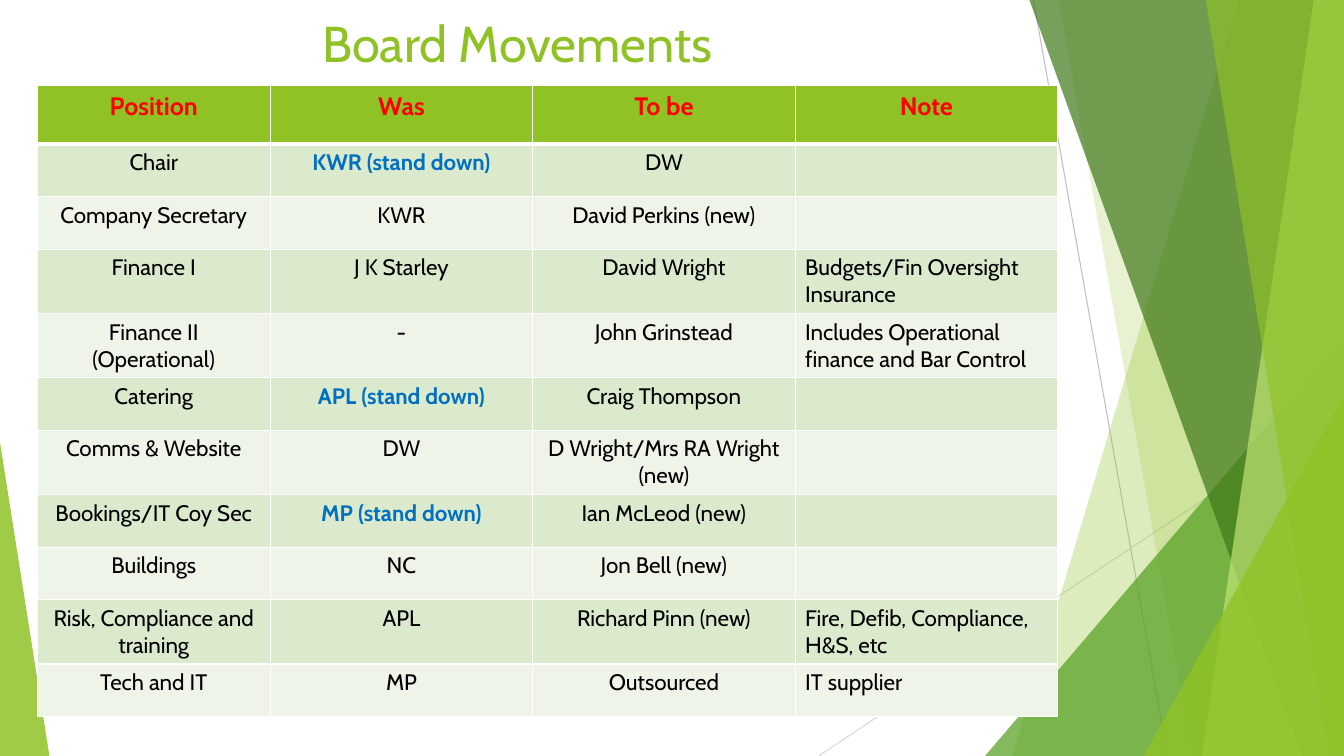
from lxml import etree
from pptx import Presentation
from pptx.dml.color import RGBColor
from pptx.enum import shapes, text
from pptx.oxml import ns
from pptx.util import Inches, Pt

FONT = "Cabin"
LIME, WHITE, BLACK, RED, BLUE = "90C226", "FFFFFF", "000000", "FF0000", "0070C0"
BANDS = ("DBE9CD", "EEF4E8")
W, H = 13.33, 7.5

HEADERS = ("Position", "Was", "To be", "Note")
MOVES = (
    ("Chair", "KWR (stand down)", "DW", ""),
    ("Company Secretary", "KWR", "David Perkins (new)", ""),
    ("Finance I", "J K Starley", "David Wright", "Budgets/Fin Oversight\nInsurance"),
    ("Finance II (Operational)", "-", "John Grinstead",
     "Includes Operational finance and Bar Control"),
    ("Catering", "APL (stand down)", "Craig Thompson", ""),
    ("Comms & Website", "DW", "D Wright/Mrs RA Wright (new)", ""),
    ("Bookings/IT Coy Sec", "MP (stand down)", "Ian McLeod (new)", ""),
    ("Buildings", "NC", "Jon Bell (new)", ""),
    ("Risk, Compliance and training", "APL", "Richard Pinn (new)",
     "Fire, Defib, Compliance, H&S, etc"),
    ("Tech and IT", "MP", "Outsourced", "IT supplier"),
)


def rgb(color):
    return RGBColor.from_string(color)


def sub(parent, tag, **attrs):
    return etree.SubElement(parent, ns.qn(tag), attrs)


def paint(sp, color, opacity):
    sp.shadow.inherit = False
    sp.fill.solid()
    sp.fill.fore_color.rgb = rgb(color)
    sp.line.fill.background()
    clr = sp._element.spPr.find(ns.qn("a:solidFill"))[0]
    sub(clr, "a:alpha", val=str(opacity * 1000))


def add_ray(slide, x1, y1, x2, y2, color):
    line = slide.shapes.add_connector(
        shapes.MSO_CONNECTOR.STRAIGHT, *map(Inches, (x1, y1, x2, y2)))
    line.line.color.rgb = rgb(color)
    line.line.width = Pt(0.75)
    sub(line._element.spPr, "a:effectLst")


def add_shard(slide, top_x, bottom_x, right, color, opacity):
    corners = [(right, 0), (right, H), (bottom_x, H)]
    fb = slide.shapes.build_freeform(Inches(top_x), 0)
    fb.add_line_segments([(Inches(x), Inches(y)) for x, y in corners])
    paint(fb.convert_to_shape(), color, opacity)


def add_wedge(slide, left, top, right, apex, color, opacity):
    sp = slide.shapes.add_shape(
        shapes.MSO_SHAPE.ISOSCELES_TRIANGLE,
        *map(Inches, (left, top, right - left, H - top)))
    sp.adjustments[0] = apex
    paint(sp, color, opacity)


def add_facets(slide, left, right):
    add_ray(slide, left + 0.48, 0, left + 1.81, H, "BFBFBF")
    add_ray(slide, right, 4.03, left - 1.65, H, "D9D9D9")
    add_shard(slide, left + 2.51, left + 0.27, right, LIME, 30)
    add_shard(slide, left + 0.73, left + 2.06, right, LIME, 20)
    add_wedge(slide, left, 3.33, right, 1, "54A021", 72)
    add_shard(slide, left + 0.44, left + 3.14, right, "3F7819", 70)
    add_shard(slide, left + 3.26, left + 2.15, right, "C0E474", 70)
    add_shard(slide, left + 2.19, left + 3.41, right, LIME, 65)
    add_wedge(slide, left + 1.57, 3.93, right, 1, LIME, 80)
    add_wedge(slide, 0, 4.39, 0.49, 0, LIME, 85)


def style(p, size, color, bold=False, align=text.PP_ALIGN.CENTER):
    p.alignment = align
    p.font.name = FONT
    p.font.size = Pt(size)
    p.font.bold = bold
    p.font.color.rgb = rgb(color)


def add_title(slide, left, top, width, height):
    title = slide.shapes.title
    title.left, title.top, title.width, title.height = map(
        Inches, (left, top, width, height))
    tf = title.text_frame
    tf.text = "Board Movements"
    tf.word_wrap = True
    tf.vertical_anchor = text.MSO_ANCHOR.TOP
    style(tf.paragraphs[0], 36, LIME)


def set_borders(cell, top, bottom):
    tcPr = cell._tc.get_or_add_tcPr()
    for side, width in (("L", 1), ("R", 1), ("T", top), ("B", bottom)):
        ln = sub(tcPr, f"a:ln{side}", w=str(Pt(width)))
        sub(sub(ln, "a:solidFill"), "a:srgbClr", val=WHITE)


def fill_cell(cell, words, row, col):
    set_borders(cell, 3 if row == 1 else 1, 3 if row == 0 else 1)
    cell.fill.solid()
    cell.fill.fore_color.rgb = rgb(BANDS[(row - 1) % 2] if row else LIME)
    cell.text = words
    leaving = "stand down" in words
    for p in cell.text_frame.paragraphs:
        if row == 0:
            style(p, 18, RED, True)
        elif col == 3:
            style(p, 16, BLACK, align=text.PP_ALIGN.LEFT)
        else:
            style(p, 16, BLUE if leaving else BLACK, leaving)


def add_moves_table(slide, left, top, width, height):
    rows = (HEADERS,) + MOVES
    header_h, first_w = 0.58, 2.31
    row_h = (height - header_h) / len(MOVES)
    col_w = (width - first_w) / (len(HEADERS) - 1)
    table = slide.shapes.add_table(
        len(rows), len(HEADERS), *map(Inches, (left, top, width, height))).table
    table.horz_banding = False
    for c, column in enumerate(table.columns):
        column.width = Inches(col_w if c else first_w)
    for r, row in enumerate(rows):
        table.rows[r].height = Inches(row_h if r else header_h)
        for c, words in enumerate(row):
            fill_cell(table.cell(r, c), words, r, c)


def main():
    prs = Presentation()
    prs.slide_width, prs.slide_height = Inches(W), Inches(H)
    slide = prs.slides.add_slide(prs.slide_layouts[5])
    add_facets(slide, 9.77, W)
    add_title(slide, 0.43, 0.07, 9.4, 0.85)
    add_moves_table(slide, 0.37, 0.85, 10.12, 5.8)
    prs.save("out.pptx")


if __name__ == "__main__":
    main()
